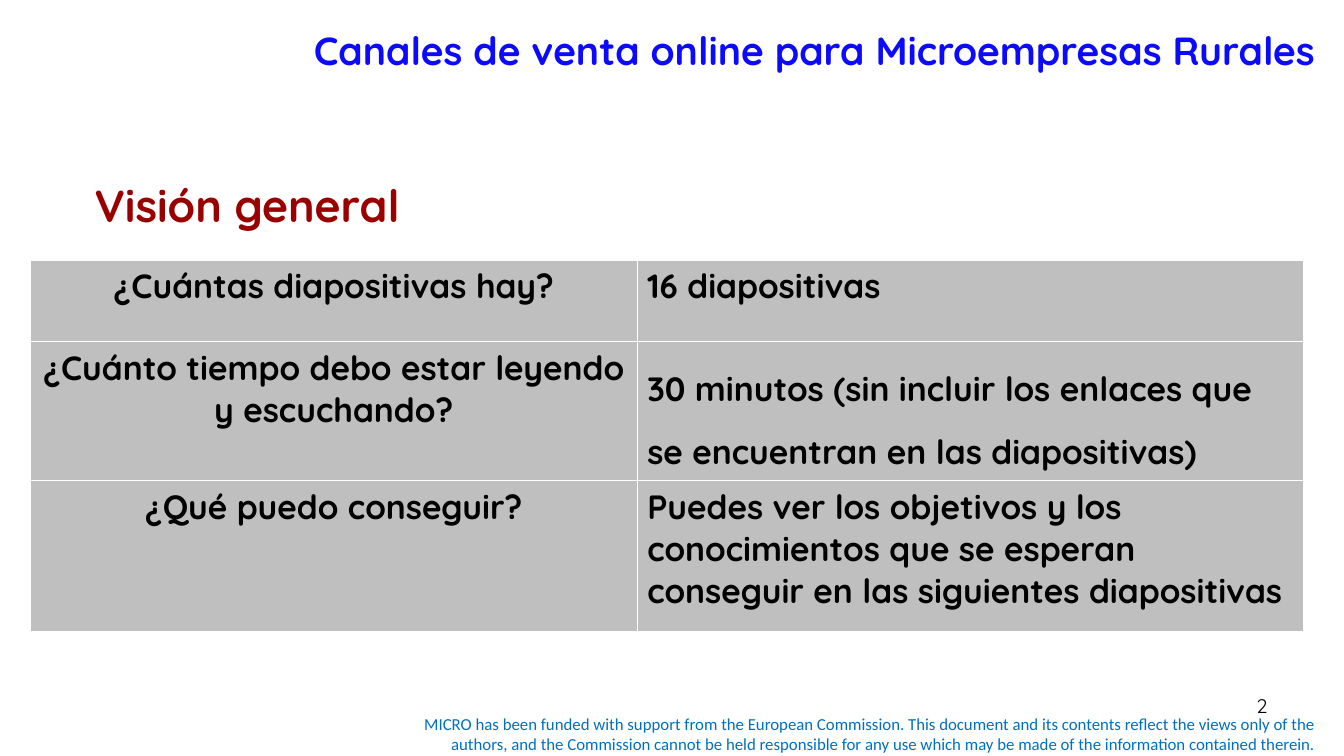
from lxml.etree import SubElement
from pptx import Presentation
from pptx.dml.color import RGBColor
from pptx.enum.text import MSO_ANCHOR as Anchor, MSO_AUTO_SIZE as AutoSize, PP_ALIGN as Align
from pptx.oxml.ns import qn
from pptx.util import Inches, Pt

# Content
TITLE = "Canales de venta online para Microempresas Rurales"
HEADING = "Visión general"
PAGE = "2"
DISCLAIMER = (
    "MICRO has been funded with support from the European Commission. "
    "This document and its contents reflect the views only of the authors, "
    "and the Commission cannot be held responsible for any use which may be "
    "made of the information contained therein."
)
# question, answer, line spacing of the answer
OVERVIEW = [
    ("¿Cuántas diapositivas hay?", "16 diapositivas", 1.0),
    ("¿Cuánto tiempo debo estar leyendo y escuchando?",
     "30 minutos (sin incluir los enlaces que se encuentran en las diapositivas)", 1.5),
    ("¿Qué puedo conseguir?",
     "Puedes ver los objetivos y los conocimientos que se esperan conseguir "
     "en las siguientes diapositivas", 1.0),
]

# Layout and style
COLORS = {"title": "0B0AFD", "heading": "990000", "text": "000000",
          "disclaimer": "0070C0", "cell": "BFBFBF", "border": "FFFFFF"}
COLUMN_WIDTHS = (6.02, 6.61)
ROW_HEIGHTS = (0.81, 1.38, 1.5)
BORDER_WIDTH = Pt(1)


def write(frame, text, size, color, bold=False, align=Align.LEFT, font="Quicksand", spacing=1.0):
    frame.word_wrap = True
    paragraph = frame.paragraphs[0]
    paragraph.alignment = align
    paragraph.line_spacing = spacing
    run = paragraph.add_run()
    run.text = text
    run.font.name = font
    run.font.size = Pt(size)
    run.font.bold = bold
    run.font.color.rgb = RGBColor.from_string(COLORS[color])


def add_text(slide, box, *args, **style):
    frame = slide.shapes.add_textbox(*map(Inches, box)).text_frame
    write(frame, *args, **style)
    return frame


def style_cell(cell):
    properties = cell._tc.get_or_add_tcPr()
    for side in "LRTB":
        line = SubElement(properties, qn(f"a:ln{side}"), w=str(BORDER_WIDTH))
        fill = SubElement(line, qn("a:solidFill"))
        SubElement(fill, qn("a:srgbClr"), val=COLORS["border"])
    cell.fill.solid()
    cell.fill.fore_color.rgb = RGBColor.from_string(COLORS["cell"])


def main():
    deck = Presentation()
    deck.slide_width, deck.slide_height = Inches(13.33), Inches(7.5)
    slide = deck.slides.add_slide(deck.slide_layouts[5])

    # Disclaimer
    disclaimer = add_text(slide, (3.75, 7.03, 9.4, 0.5), DISCLAIMER, 12, "disclaimer",
                          align=Align.RIGHT, font="Calibri")
    disclaimer.vertical_anchor = Anchor.MIDDLE

    # Title, raised above the middle of its box
    title = slide.shapes.title
    title.left, title.top, title.width, title.height = map(Inches, (1.14, 0, 12, 1.25))
    title.text_frame.auto_size = AutoSize.NONE
    title.text_frame.vertical_anchor = Anchor.MIDDLE
    title.text_frame.margin_bottom = Inches(0.32)
    write(title.text_frame, TITLE, 28, "title", bold=True, align=Align.RIGHT)

    # Overview table
    table = slide.shapes.add_table(
        len(OVERVIEW), len(COLUMN_WIDTHS), Inches(0.3), Inches(2.58),
        Inches(sum(COLUMN_WIDTHS)), Inches(sum(ROW_HEIGHTS))).table
    table.first_row = table.horz_banding = False
    for column, width in zip(table.columns, COLUMN_WIDTHS):
        column.width = Inches(width)
    for index, (question, answer, spacing) in enumerate(OVERVIEW):
        table.rows[index].height = Inches(ROW_HEIGHTS[index])
        question_cell, answer_cell = table.rows[index].cells
        write(question_cell.text_frame, question, 24, "text", bold=True, align=Align.CENTER)
        write(answer_cell.text_frame, answer, 24, "text", bold=True, spacing=spacing)
        style_cell(question_cell)
        style_cell(answer_cell)

    # Page number and heading
    add_text(slide, (9.56, 6.83, 3.11, 0.52), PAGE, 14, "text", align=Align.RIGHT)
    add_text(slide, (0.84, 1.71, 3.9, 0.64), HEADING, 32, "heading", bold=True)

    deck.save("out.pptx")


if __name__ == "__main__":
    main()
